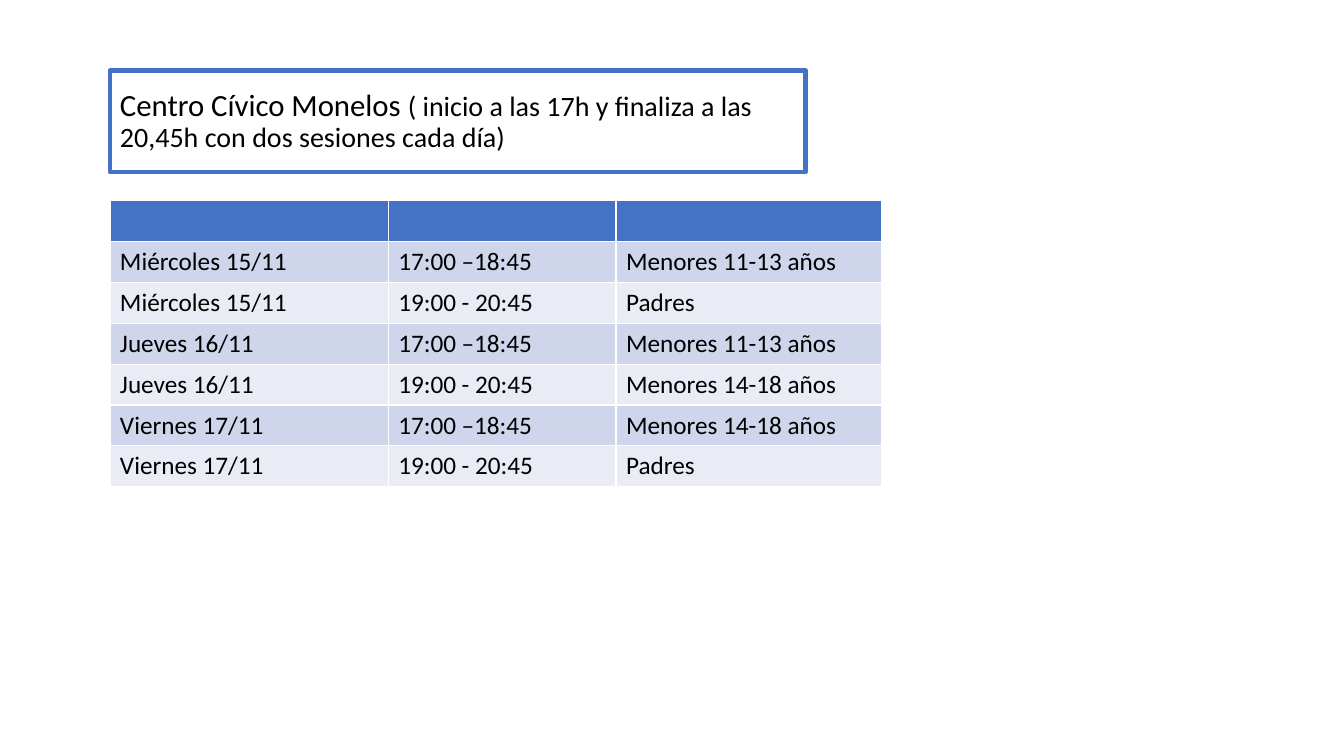
from pptx import Presentation
from pptx.dml.color import RGBColor
from pptx.enum.text import MSO_ANCHOR, MSO_AUTO_SIZE, PP_ALIGN
from pptx.util import Pt

FONT = "Calibri"
BLUE, WHITE, BLACK = "4472C4", "FFFFFF", "000000"
BANDS = ["CFD5EA", "E9EBF5"]
TITLE = [
    ("Centro Cívico Monelos ", 22),
    ("( inicio a las 17h y finaliza a las 20,45h con dos sesiones cada día)", 20),
]
EARLY, LATE = "17:00 –18:45", "19:00 - 20:45"
ROWS = [
    ("", "", ""),
    ("Miércoles 15/11", EARLY, "Menores 11-13 años"),
    ("Miércoles 15/11", LATE, "Padres"),
    ("Jueves 16/11", EARLY, "Menores 11-13 años"),
    ("Jueves 16/11", LATE, "Menores 14-18 años"),
    ("Viernes 17/11", EARLY, "Menores 14-18 años"),
    ("Viernes 17/11", LATE, "Padres"),
]
WIDTHS = [276, 226, 263]
LEFT, ROW_H = 109, 40


def px(n):
    """Turn px, 100 to the inch, into EMU."""
    return n * 9144


def color(code):
    return RGBColor.from_string(code)


def paint(fill, code):
    fill.solid()
    fill.fore_color.rgb = color(code)


def style(font):
    font.name = FONT
    font.color.rgb = color(BLACK)


def add_title(slide):
    box = slide.shapes.title
    box.left, box.top, box.width, box.height = map(px, (LEFT, 70, 690, 101))
    paint(box.fill, WHITE)
    box.line.color.rgb = color(BLUE)
    box.line.width = Pt(3)
    frame = box.text_frame
    frame.auto_size = MSO_AUTO_SIZE.NONE
    frame.word_wrap = True
    frame.vertical_anchor = MSO_ANCHOR.MIDDLE
    para = frame.paragraphs[0]
    para.alignment = PP_ALIGN.LEFT
    para.line_spacing = 0.9
    style(para.font)
    for text, size in TITLE:
        run = para.add_run()
        run.text = text
        run.font.size = Pt(size)


def add_schedule(slide):
    area = map(px, (LEFT, 199, sum(WIDTHS), ROW_H * len(ROWS)))
    table = slide.shapes.add_table(len(ROWS), len(WIDTHS), *area).table
    for col, width in zip(table.columns, WIDTHS):
        col.width = px(width)
    for r, row in enumerate(ROWS):
        for c, text in enumerate(row):
            cell = table.cell(r, c)
            paint(cell.fill, BANDS[(r - 1) % 2] if r else BLUE)
            cell.text = text
            font = cell.text_frame.paragraphs[0].font
            style(font)
            font.size = Pt(18)


def main():
    deck = Presentation()
    deck.slide_width, deck.slide_height = px(1333), px(750)
    slide = deck.slides.add_slide(deck.slide_layouts[5])
    add_schedule(slide)
    add_title(slide)
    deck.save("out.pptx")


if __name__ == "__main__":
    main()
